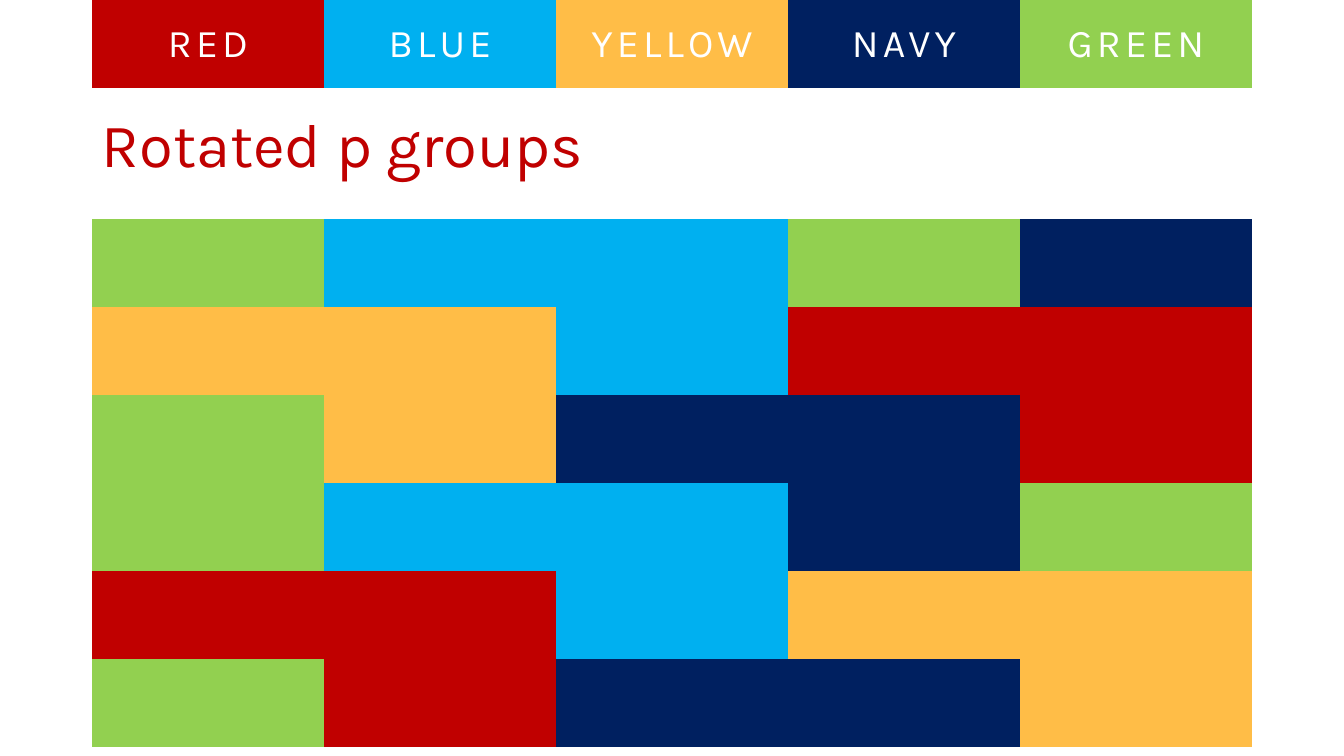
from pptx import Presentation
from pptx.dml.color import RGBColor
from pptx.enum.text import MSO_ANCHOR, PP_ALIGN
from pptx.oxml.ns import qn
from pptx.util import Emu, Pt

COLOURS = {"R": "C00000", "B": "00B0F0", "Y": "FFBD47", "N": "002060", "G": "92D050"}
NAMES = ["RED", "BLUE", "YELLOW", "NAVY", "GREEN"]
PATTERN = ["GBBGN", "YYBRR", "GYNNR", "GBBNG", "RRBYY", "GRNNY"]
NO_STYLE_NO_GRID = "{2D5ABB26-0587-4C30-8999-92F81FD0307C}"
LEFT, COL_W, ROW_H = 92, 232, 88


def px(n):
    return Emu(round(n * 12192000 / 1344))


def colour(hex_code):
    return RGBColor.from_string(hex_code)


prs = Presentation()
prs.slide_width, prs.slide_height = px(1344), px(756)
s = prs.slides.add_slide(prs.slide_layouts[6])

# Title
title = s.shapes.add_textbox(px(LEFT), px(40), px(1252), px(146))
tf = title.text_frame
tf.word_wrap = True
tf.vertical_anchor = MSO_ANCHOR.BOTTOM
p = tf.paragraphs[0]
p.line_spacing = 0.9
r = p.add_run()
r.text = "Rotated p groups"
r.font.name, r.font.size = "Karla", Pt(44)
r.font.color.rgb = colour("C00000")

# Colour pattern, then the legend on top; both share one column grid
tables = []
for top, rows in ((219, PATTERN), (0, ["RBYNG"])):
    table = s.shapes.add_table(len(rows), len(NAMES), px(LEFT), px(top),
                               px(COL_W * len(NAMES)), px(ROW_H * len(rows))).table
    table.first_row = table.horz_banding = False
    style = table._tbl.tblPr.find(qn("a:tableStyleId"))
    style.text = NO_STYLE_NO_GRID
    for i, row in enumerate(rows):
        for j, letter in enumerate(row):
            fill = table.cell(i, j).fill
            fill.solid()
            fill.fore_color.rgb = colour(COLOURS[letter])
    tables.append(table)

legend = tables[1]
for j, name in enumerate(NAMES):
    cell = legend.cell(0, j)
    cell.vertical_anchor = MSO_ANCHOR.MIDDLE
    p = cell.text_frame.paragraphs[0]
    p.alignment = PP_ALIGN.CENTER
    r = p.add_run()
    r.text = name
    r.font.name, r.font.size = "Karla", Pt(28)
    r.font.color.rgb = colour("FFFFFF")
    r.font._element.set("spc", "300")

prs.save("out.pptx")
